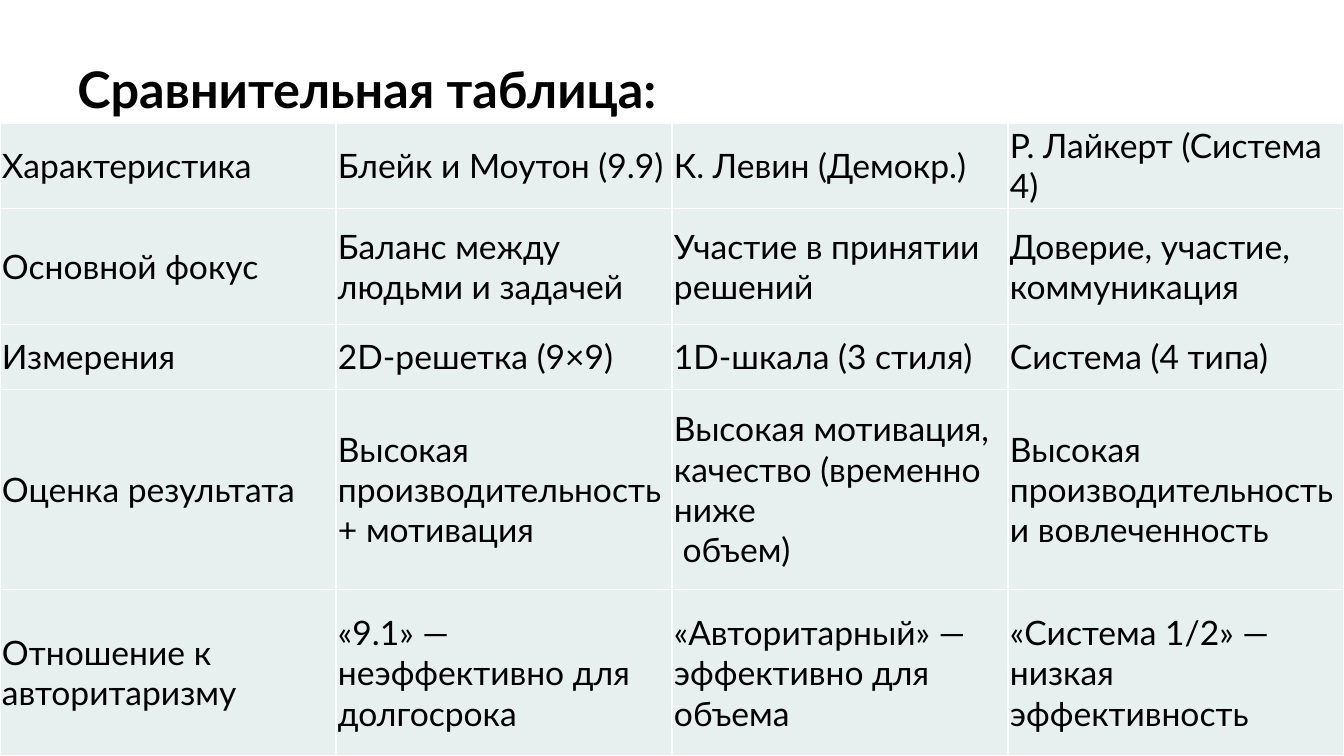
from dataclasses import dataclass

from lxml.etree import SubElement
from pptx import Presentation
from pptx.dml.color import RGBColor
from pptx.enum.text import MSO_ANCHOR as Anchor
from pptx.oxml.ns import qn
from pptx.slide import Slide
from pptx.table import _Cell as Cell
from pptx.text.text import _Paragraph as Paragraph
from pptx.util import Cm, Pt


@dataclass(frozen=True)
class Theme:
    font: str = "Lato"
    ink: str = "000000"
    cell_fill: str = "E8EFEF"
    grid: str = "FFFFFF"
    grid_width: float = 1
    title_size: float = 36
    cell_size: float = 24


@dataclass(frozen=True)
class Criterion:
    height: float
    texts: tuple[str, str, str, str]


THEME = Theme()
SLIDE_WIDTH, SLIDE_HEIGHT = 33.87, 19.05
TABLE_TOP = 3.1

CRITERIA = (
    Criterion(2.16, ("Характеристика", "Блейк и Моутон (9.9)",
                     "К. Левин (Демокр.)", "Р. Лайкерт (Система 4)")),
    Criterion(2.92, ("Основной фокус", "Баланс между людьми и задачей",
                     "Участие в принятии решений", "Доверие, участие, коммуникация")),
    Criterion(1.63, ("Измерения", "2D-решетка (9×9)",
                     "1D-шкала (3 стиля)", "Система (4 типа)")),
    Criterion(5.05, ("Оценка результата", "Высокая производительность + мотивация",
                     "Высокая мотивация, качество (временно ниже\n объем)",
                     "Высокая производительность и вовлеченность")),
    Criterion(4.19, ("Отношение к авторитаризму", "«9.1» — неэффективно для долгосрока",
                     "«Авторитарный» — эффективно для объема",
                     "«Система 1/2» — низкая эффективность")),
)


def add_run(paragraph: Paragraph, text: str, size: float, bold: bool = False) -> None:
    run = paragraph.add_run()
    run.text = text
    run.font.name = THEME.font
    run.font.size = Pt(size)
    run.font.bold = bold
    run.font.color.rgb = RGBColor.from_string(THEME.ink)


def add_borders(cell: Cell) -> None:
    properties = cell._tc.get_or_add_tcPr()
    for side in ("a:lnL", "a:lnR", "a:lnT", "a:lnB"):
        border = SubElement(properties, qn(side), w=str(Pt(THEME.grid_width)))
        fill = SubElement(border, qn("a:solidFill"))
        SubElement(fill, qn("a:srgbClr"), val=THEME.grid)


def fill_cell(cell: Cell, text: str) -> None:
    add_borders(cell)
    cell.fill.solid()
    cell.fill.fore_color.rgb = RGBColor.from_string(THEME.cell_fill)
    cell.vertical_anchor = Anchor.MIDDLE
    cell.margin_left = cell.margin_right = Cm(0.05)
    cell.margin_top = cell.margin_bottom = Cm(0.03)
    frame = cell.text_frame
    for index, line in enumerate(text.split("\n")):
        paragraph = frame.add_paragraph() if index else frame.paragraphs[0]
        add_run(paragraph, line, THEME.cell_size)


def add_title(slide: Slide, text: str) -> None:
    title = slide.shapes.add_textbox(Cm(1.7), Cm(1.52), Cm(29.6), Cm(3.15))
    title.text_frame.word_wrap = True
    paragraph = title.text_frame.paragraphs[0]
    paragraph.line_spacing = 0.9
    add_run(paragraph, text, THEME.title_size, bold=True)


def add_comparison(slide: Slide, criteria: tuple[Criterion, ...]) -> None:
    height = sum(criterion.height for criterion in criteria)
    comparison = slide.shapes.add_table(
        len(criteria), len(criteria[0].texts),
        Cm(0), Cm(TABLE_TOP), Cm(SLIDE_WIDTH), Cm(height)).table
    for row, criterion in zip(comparison.rows, criteria):
        row.height = Cm(criterion.height)
        for cell, text in zip(row.cells, criterion.texts):
            fill_cell(cell, text)


def main() -> None:
    """Build the slide comparing leadership models."""
    deck = Presentation()
    deck.slide_width, deck.slide_height = Cm(SLIDE_WIDTH), Cm(SLIDE_HEIGHT)
    slide = deck.slides.add_slide(deck.slide_layouts[6])
    add_title(slide, "Сравнительная таблица:")
    add_comparison(slide, CRITERIA)
    deck.save("out.pptx")


if __name__ == "__main__":
    main()
